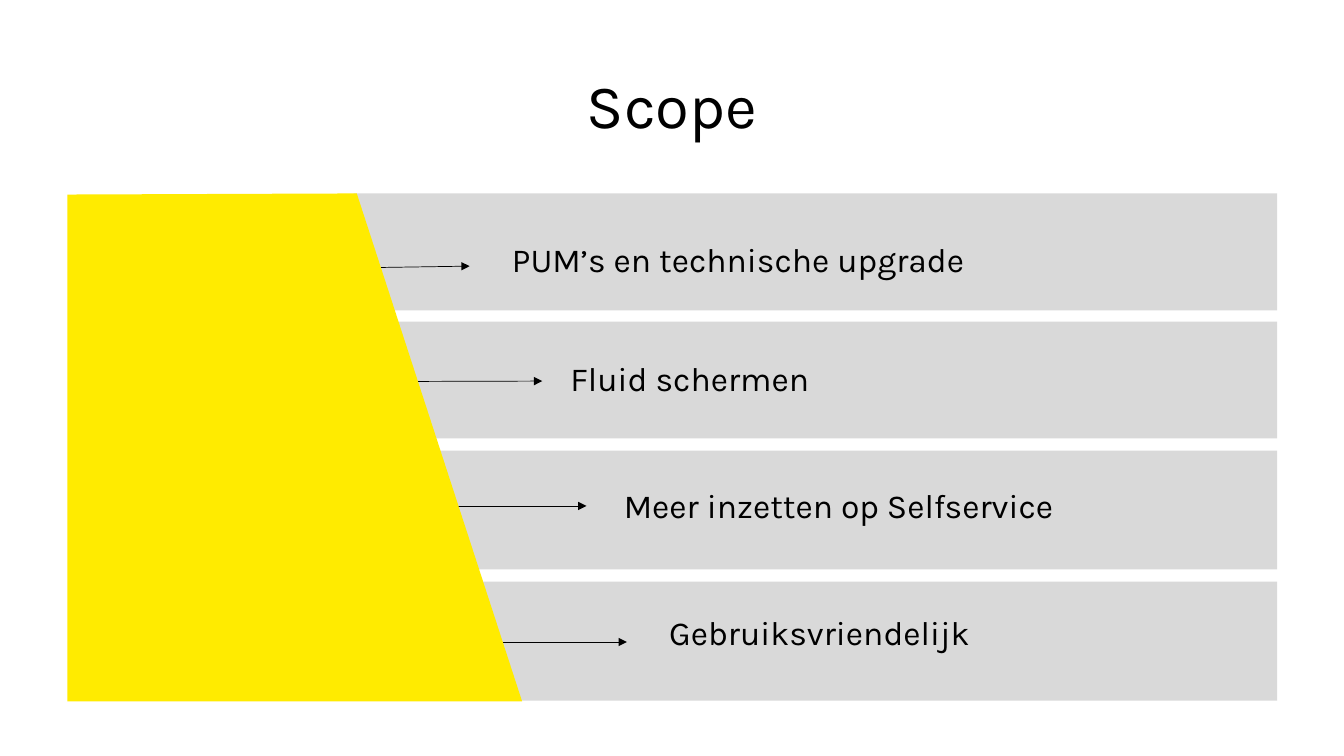
import pptx
import pptx.util
import pptx.dml.color
import pptx.enum.shapes
import pptx.enum.text
import pptx.oxml
import pptx.oxml.ns
from pptx.util import Pt

# Content: band (top, height), arrow (start, end), label (left, top, width)
TITLE = "Scope"
ROWS = [
    {"text": "PUM’s en technische upgrade", "band": (138.2, 83.5),
     "arrow": ((143.3, 193), (335.5, 190.1)), "label": (358.6, 167, 512)},
    {"text": "Fluid schermen", "band": (229.7, 83.5),
     "arrow": ((140.4, 272.9), (387.4, 272.2)), "label": (400.3, 252, 512)},
    {"text": "Meer inzetten op Selfservice", "band": (321.8, 85),
     "arrow": ((149, 361.4), (419, 361.4)), "label": (438.5, 342.7, 427.7)},
    {"text": "Gebruiksvriendelijk", "band": (415.4, 85),
     "arrow": ((262.1, 458.6), (447.8, 458.6)), "label": (470.9, 433.4, 475.2)},
]
WEDGE = [(254.9, 138.2), (373, 501.1), (48.2, 501.1), (48.2, 139)]
BAND_LEFT, BAND_WIDTH = 252.7, 659.5
LABEL_HEIGHT = 36
FONT = "Karla"
COLORS = {"text": "000000", "band": "D9D9D9", "wedge": "FFEB00"}


def color(name):
    return pptx.dml.color.RGBColor.from_string(COLORS[name])


def paint(shape, name):
    shape.shadow.inherit = False
    shape.fill.solid()
    shape.fill.fore_color.rgb = color(name)
    shape.line.fill.background()


def add_text(text, left, top, width, height, size):
    box = slide.shapes.add_textbox(Pt(left), Pt(top), Pt(width), Pt(height))
    box.text_frame.word_wrap = True
    box.text_frame.text = text
    para = box.text_frame.paragraphs[0]
    for span in para.runs:
        span.font.name = FONT
        span.font.size = Pt(size)
        span.font.color.rgb = color("text")
    return box.text_frame, para


def add_arrow(start, end):
    points = [Pt(value) for value in start + end]
    arrow = slide.shapes.add_connector(
        pptx.enum.shapes.MSO_CONNECTOR.STRAIGHT, *points)
    arrow.line.color.rgb = color("text")
    arrow.line.width = Pt(0.5)
    properties = arrow._element.spPr
    head = pptx.oxml.ns.qn("a:tailEnd")
    arrow.line._get_or_add_ln().append(
        properties.makeelement(head, {"type": "triangle"}))
    properties.append(properties.makeelement(pptx.oxml.ns.qn("a:effectLst"), {}))


deck = pptx.Presentation()
deck.slide_width, deck.slide_height = Pt(960), Pt(540)
slide = deck.slides.add_slide(deck.slide_layouts[6])

# Grey bands with their arrows
for row in ROWS:
    top, height = row["band"]
    band = slide.shapes.add_shape(
        pptx.enum.shapes.MSO_SHAPE.RECTANGLE,
        Pt(BAND_LEFT), Pt(top), Pt(BAND_WIDTH), Pt(height))
    paint(band, "band")
    add_arrow(*row["arrow"])

# Yellow wedge over the band and arrow starts
corners = [(Pt(x), Pt(y)) for x, y in WEDGE]
builder = slide.shapes.build_freeform(*corners[0])
builder.add_line_segments(corners[1:], close=True)
paint(builder.convert_to_shape(), "wedge")

# Title
frame, para = add_text(TITLE, 66.2, 25.2, 828, 104.4, 44)
frame.vertical_anchor = pptx.enum.text.MSO_ANCHOR.MIDDLE
para.alignment = pptx.enum.text.PP_ALIGN.CENTER
para.line_spacing = 0.9

# Labels
for row in ROWS:
    frame, para = add_text(row["text"], *row["label"], LABEL_HEIGHT, 24)
    frame.auto_size = pptx.enum.text.MSO_AUTO_SIZE.SHAPE_TO_FIT_TEXT

deck.save("out.pptx")
